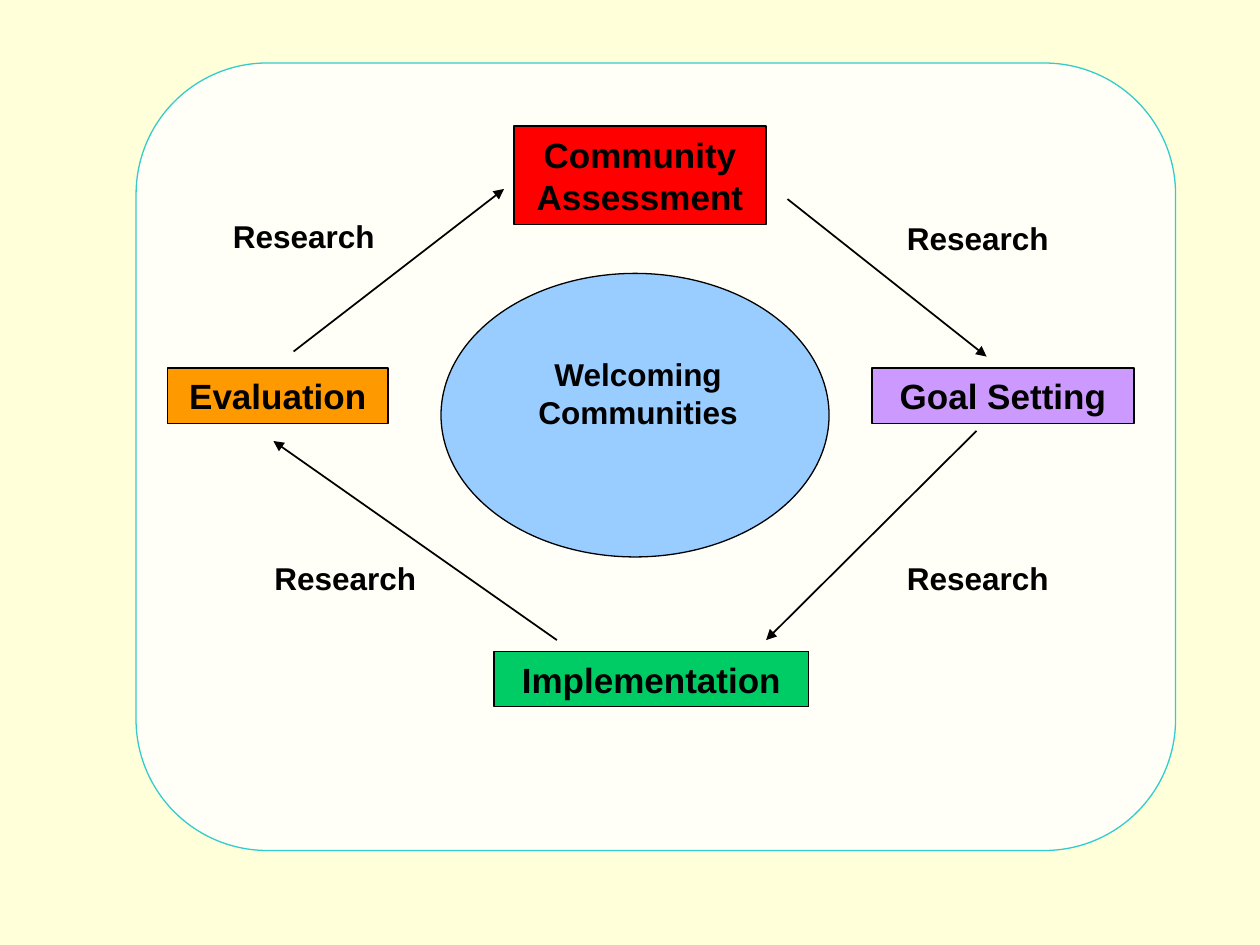
from lxml import etree
from pptx import Presentation
from pptx.dml.color import RGBColor
from pptx.enum import shapes, text
from pptx.oxml import ns
from pptx.util import Inches, Pt

CREAM = RGBColor(0xFF, 0xFF, 0xD9)
IVORY = RGBColor(0xFF, 0xFF, 0xF7)
TEAL = RGBColor(0x33, 0xCC, 0xCC)
RED = RGBColor(0xFF, 0x00, 0x00)
ORANGE = RGBColor(0xFF, 0x99, 0x00)
PURPLE = RGBColor(0xCC, 0x99, 0xFF)
GREEN = RGBColor(0x00, 0xCC, 0x66)
BLUE = RGBColor(0x99, 0xCC, 0xFF)
BLACK = RGBColor(0x00, 0x00, 0x00)

RECTANGLE = shapes.MSO_SHAPE.RECTANGLE
CENTER = text.PP_ALIGN.CENTER

# Label lines, position and size, fill
STAGES = [
    (["Community", "Assessment"], (4.08, 1, 2, 0.78), RED),
    (["Goal Setting"], (6.92, 2.92, 2.08, 0.44), PURPLE),
    (["Implementation"], (3.92, 5.17, 2.5, 0.44), GREEN),
    (["Evaluation"], (1.33, 2.92, 1.75, 0.44), ORANGE),
]

# Start and end of each step, clockwise from the top
STEPS = [
    ((6.25, 1.58), (7.83, 2.83)),
    ((7.75, 3.42), (6.08, 5.08)),
    ((4.42, 5.08), (2.17, 3.5)),
    ((2.33, 2.79), (4, 1.5)),
]

RESEARCH_CORNERS = [(1.75, 1.67), (7.1, 1.69), (7.1, 4.39), (2.08, 4.39)]


def inches(values):
    return [Inches(value) for value in values]


def write_lines(frame, lines, size, align):
    """Fill the frame with one bold paragraph per line."""
    for index, line in enumerate(lines):
        paragraph = frame.add_paragraph() if index else frame.paragraphs[0]
        paragraph.alignment = align
        run = paragraph.add_run()
        run.text = line
        run.font.name = "Arial"
        run.font.size = Pt(size)
        run.font.bold = True
        run.font.color.rgb = BLACK


def add_panel(slide, preset, place, fill, outline=BLACK):
    panel = slide.shapes.add_shape(preset, *inches(place))
    panel.shadow.inherit = False
    panel.fill.solid()
    panel.fill.fore_color.rgb = fill
    panel.line.color.rgb = outline
    panel.line.width = Pt(0.75)
    return panel


def add_stage(slide, lines, place, fill):
    frame = add_panel(slide, RECTANGLE, place, fill).text_frame
    frame.word_wrap = True
    frame.vertical_anchor = text.MSO_ANCHOR.MIDDLE
    write_lines(frame, lines, 20, CENTER)


def add_label(slide, label, place, align=text.PP_ALIGN.LEFT, wrap=False):
    frame = slide.shapes.add_textbox(*inches(place)).text_frame
    frame.word_wrap = wrap
    write_lines(frame, [label], 18, align)


def add_arrow(slide, start, end):
    arrow = slide.shapes.add_connector(
        shapes.MSO_CONNECTOR.STRAIGHT, *inches(start + end))
    arrow.line.color.rgb = BLACK
    arrow.line.width = Pt(1)
    head = etree.SubElement(arrow.line._get_or_add_ln(), ns.qn("a:tailEnd"))
    head.set("type", "triangle")
    etree.SubElement(arrow._element.spPr, ns.qn("a:effectLst"))


def main():
    deck = Presentation()
    deck.slide_width, deck.slide_height = Inches(10), Inches(7.5)
    slide = deck.slides.add_slide(deck.slide_layouts[6])
    slide.background.fill.solid()
    slide.background.fill.fore_color.rgb = CREAM

    add_panel(slide, shapes.MSO_SHAPE.ROUNDED_RECTANGLE,
              (1.08, 0.5, 8.25, 6.25), IVORY, TEAL)
    add_panel(slide, shapes.MSO_SHAPE.OVAL, (3.5, 2.17, 3.08, 2.25), BLUE)
    add_label(slide, "Welcoming Communities", (3.73, 2.77, 2.67, 1.15),
              CENTER, wrap=True)
    for lines, place, fill in STAGES:
        add_stage(slide, lines, place, fill)
    for start, end in STEPS:
        add_arrow(slide, start, end)
    for corner in RESEARCH_CORNERS:
        add_label(slide, "Research", corner + (1.33, 0.4))

    deck.save("out.pptx")


if __name__ == "__main__":
    main()
